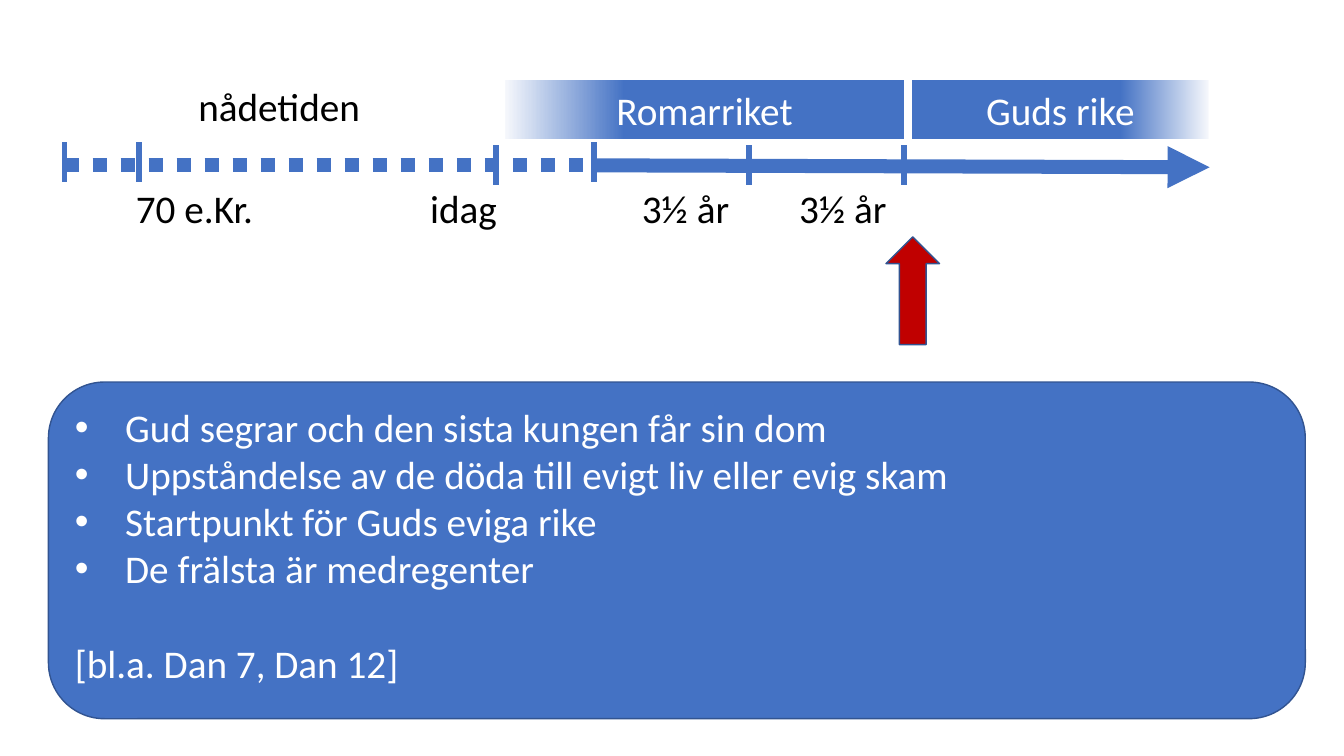
from pptx import Presentation
from pptx.dml.color import RGBColor
from pptx.enum.dml import MSO_LINE
from pptx.enum.shapes import MSO_CONNECTOR, MSO_SHAPE as SHAPE
from pptx.enum.text import MSO_ANCHOR as ANCHOR, MSO_AUTO_SIZE as AUTO, PP_ALIGN as ALIGN
from pptx.oxml.ns import qn
from pptx.util import Pt
from lxml.etree import SubElement

# Content: lengths in points
AXIS = [  # x1, y1, x2, y2, dash, arrowhead
    (424.1, 118.1, 864, 119.5, None, "triangle"),
    (46.1, 118.1, 422.6, 118.1, MSO_LINE.ROUND_DOT, None),
]
TICKS = [(46.1, 101.5), (99.4, 101.5), (354.2, 103.7),
         (424.1, 101.5), (535, 103.7), (645.8, 103.7)]  # x, top
LABELS = [  # text, left, top, width
    ("70 e.Kr.", 90, 128.2, 99.4),
    ("idag", 300.2, 128.2, 62.6),
    ("3½ år", 451.4, 128.2, 77.8),
    ("3½ år", 563.8, 128.2, 77.8),
    ("nådetiden", 134.6, 55.4, 131),
]
KINGDOMS = [  # text, left, width, gradient angle
    ("Romarriket", 360.7, 285.1, 0),
    ("Guds rike", 651.6, 211.7, 180),
]
POINTS = [
    "Gud segrar och den sista kungen får sin dom",
    "Uppståndelse av de döda till evigt liv eller evig skam",
    "Startpunkt för Guds eviga rike",
    "De frälsta är medregenter",
]
REFERENCE = "[bl.a. Dan 7, Dan 12]"

THEME = {
    "blue": RGBColor(0x44, 0x72, 0xC4), "pale": RGBColor(0xF6, 0xF8, 0xFC),
    "edge": RGBColor(0x32, 0x54, 0x91), "red": RGBColor(0xC0, 0, 0),
    "black": RGBColor(0, 0, 0), "white": RGBColor(255, 255, 255),
    "font": "Calibri", "size": 28, "axis": 10, "tick": 4,
}
TICK_H, LABEL_H = 28.8, 41
BAND_TOP, BAND_H = 56.9, 42.5
PANEL = (34.6, 272.9, 897.8, 240.5)
POINTER = (632.9, 169.2, 38.2, 77)
INDENT, LINE_H = 36, 34.2

prs = Presentation()
prs.slide_width, prs.slide_height = Pt(960), Pt(540)
s = prs.slides.add_slide(prs.slide_layouts[6])


def add_line(x1, y1, x2, y2, width, dash=None, head=None):
    c = s.shapes.add_connector(MSO_CONNECTOR.STRAIGHT, Pt(x1), Pt(y1), Pt(x2), Pt(y2))
    c.line.color.rgb = THEME["blue"]
    c.line.width = Pt(width)
    if dash:
        c.line.dash_style = dash
    if head:
        SubElement(c.line._get_or_add_ln(), qn("a:tailEnd"), type=head)
    SubElement(c._element.spPr, qn("a:effectLst"))


def add_shape(kind, box, fill=None):
    sp = s.shapes.add_shape(kind, *map(Pt, box))
    sp.shadow.inherit = False
    if fill:
        sp.fill.solid()
        sp.fill.fore_color.rgb = THEME[fill]
        sp.line.color.rgb = THEME["edge"]
        sp.line.width = Pt(1)
    else:
        sp.line.fill.background()
    return sp


def write(p, text, color, align=ALIGN.LEFT):
    p.alignment = align
    r = p.add_run()
    r.text = text
    fmt = {"name": THEME["font"], "size": Pt(THEME["size"])}
    for key, value in fmt.items():
        setattr(r.font, key, value)
    r.font.color.rgb = THEME[color]


# Timeline with its ticks
for x1, y1, x2, y2, dash, head in AXIS:
    add_line(x1, y1, x2, y2, THEME["axis"], dash, head)
for x, top in TICKS:
    add_line(x, top, x, top + TICK_H, THEME["tick"])

# Period labels
for text, left, top, width in LABELS:
    tf = s.shapes.add_textbox(Pt(left), Pt(top), Pt(width), Pt(LABEL_H)).text_frame
    tf.word_wrap = False
    tf.auto_size = AUTO.SHAPE_TO_FIT_TEXT
    write(tf.paragraphs[0], text, "black")

# Kingdom bands fading at the outer end
for text, left, width, angle in KINGDOMS:
    sp = add_shape(SHAPE.RECTANGLE, (left, BAND_TOP, width, BAND_H))
    sp.fill.gradient()
    sp.fill.gradient_angle = angle
    for stop, (pos, color) in zip(sp.fill.gradient_stops, [(0, "pale"), (0.3, "blue")]):
        stop.position = pos
        stop.color.rgb = THEME[color]
    sp.text_frame.vertical_anchor = ANCHOR.MIDDLE
    write(sp.text_frame.paragraphs[0], text, "white", ALIGN.CENTER)

# Panel with bullet points and the reference below
tf = add_shape(SHAPE.ROUNDED_RECTANGLE, PANEL, "blue").text_frame
tf.word_wrap = True
tf.vertical_anchor = ANCHOR.TOP
for i, text in enumerate(POINTS):
    p = tf.add_paragraph() if i else tf.paragraphs[0]
    write(p, text, "white")
    pPr = p._p.get_or_add_pPr()
    pPr.set("marL", str(Pt(INDENT)))
    pPr.set("indent", str(-Pt(INDENT)))
    SubElement(pPr, qn("a:buFont"), typeface="Arial")
    SubElement(pPr, qn("a:buChar"), char="•")
p = tf.add_paragraph()
p.space_before = Pt(LINE_H)
write(p, REFERENCE, "white")

# Pointer to the start of the last kingdom
add_shape(SHAPE.UP_ARROW, POINTER, "red")

prs.save("out.pptx")
